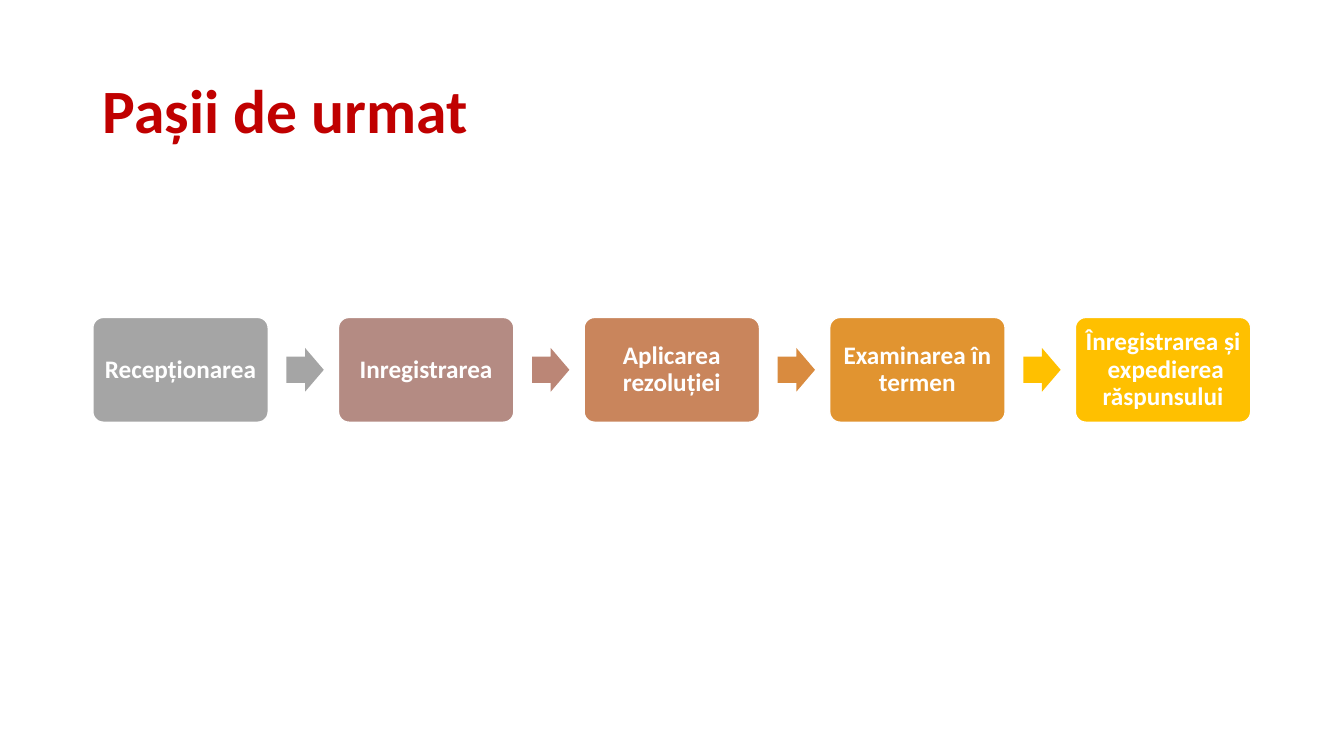
from pptx import Presentation
from pptx.dml.color import RGBColor
from pptx.enum.shapes import MSO_SHAPE
from pptx.enum.text import MSO_ANCHOR, MSO_AUTO_SIZE, PP_ALIGN
from pptx.util import Cm, Pt

ROUNDED = MSO_SHAPE.ROUNDED_RECTANGLE
ARROW = MSO_SHAPE.RIGHT_ARROW
MIDDLE = MSO_ANCHOR.MIDDLE
NO_AUTOFIT = MSO_AUTO_SIZE.NONE
LEFT, CENTER = PP_ALIGN.LEFT, PP_ALIGN.CENTER

TITLE_ONLY = 5
FONT = "Calibri"
RED = RGBColor(0xC0, 0x00, 0x00)
WHITE = RGBColor(0xFF, 0xFF, 0xFF)
GREY = RGBColor(0xA5, 0xA5, 0xA5)
ROSE = RGBColor(0xB4, 0x8B, 0x83)
CLAY = RGBColor(0xBB, 0x86, 0x76)
COPPER = RGBColor(0xC9, 0x85, 0x5C)
AMBER = RGBColor(0xD9, 0x8B, 0x3F)
ORANGE = RGBColor(0xE1, 0x94, 0x30)
GOLD = RGBColor(0xFF, 0xC0, 0x00)

STEPS = [
    ("Recepționarea", GREY, GREY),
    ("Inregistrarea", ROSE, CLAY),
    ("Aplicarea rezoluției", COPPER, AMBER),
    ("Examinarea în termen", ORANGE, GOLD),
    ("Înregistrarea și  expedierea răspunsului", GOLD, None),
]

FLOW_LEFT, FLOW_MIDDLE = Cm(2.34), Cm(9.32)
STEP_PITCH = Cm(6.19)
BOX_W, BOX_H = Cm(4.42), Cm(2.64)
ARROW_W, ARROW_H = Cm(0.94), Cm(1.1)
ARROW_GAP = Cm(0.46)


def write_text(tf, text, size=18, color=WHITE, align=CENTER, inset=Cm(0.18)):
    tf.word_wrap = True
    tf.auto_size = NO_AUTOFIT
    tf.vertical_anchor = MIDDLE
    tf.margin_left = tf.margin_right = inset
    tf.margin_top = tf.margin_bottom = Cm(0.18)
    p = tf.paragraphs[0]
    p.alignment = align
    p.line_spacing = 0.9
    r = p.add_run()
    r.text = text
    r.font.name = FONT
    r.font.size = Pt(size)
    r.font.bold = True
    r.font.color.rgb = color


def add_title(s, text):
    title = s.shapes.title
    title.left, title.top = Cm(2.34), Cm(1.02)
    title.width, title.height = Cm(29.21), Cm(3.68)
    write_text(title.text_frame, text, size=44, color=RED, align=LEFT, inset=Cm(0.25))


def add_filled(s, kind, left, width, height, color):
    sp = s.shapes.add_shape(kind, left, FLOW_MIDDLE - height // 2, width, height)
    sp.shadow.inherit = False
    sp.fill.solid()
    sp.fill.fore_color.rgb = color
    return sp


def add_step(s, left, text, color):
    sp = add_filled(s, ROUNDED, left, BOX_W, BOX_H, color)
    sp.adjustments[0] = 0.1
    sp.line.color.rgb = WHITE
    sp.line.width = Pt(1)
    write_text(sp.text_frame, text)


def add_arrow(s, left, color):
    sp = add_filled(s, ARROW, left, ARROW_W, ARROW_H, color)
    sp.adjustments[0] = 0.6
    sp.adjustments[1] = 0.5
    sp.line.fill.background()


def main():
    prs = Presentation()
    prs.slide_width, prs.slide_height = Cm(33.87), Cm(19.05)
    s = prs.slides.add_slide(prs.slide_layouts[TITLE_ONLY])
    add_title(s, "Pașii de urmat")
    for i, (text, box_color, arrow_color) in enumerate(STEPS):
        left = FLOW_LEFT + i * STEP_PITCH
        add_step(s, left, text, box_color)
        if arrow_color is not None:
            add_arrow(s, left + BOX_W + ARROW_GAP, arrow_color)
    prs.save("out.pptx")


if __name__ == "__main__":
    main()
